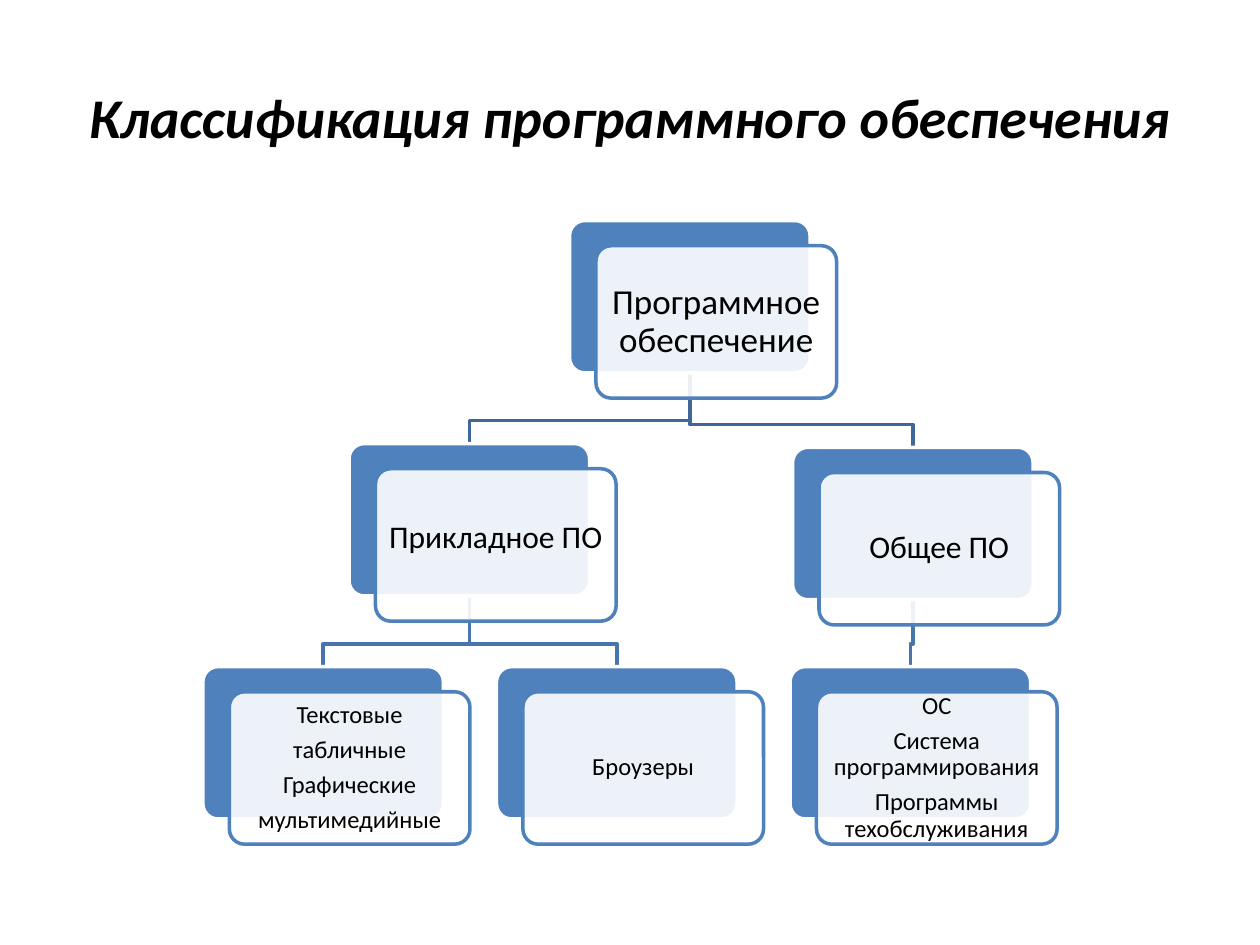
from dataclasses import dataclass

from lxml import etree
from pptx import Presentation
from pptx.dml.color import RGBColor
from pptx.enum import shapes, text
from pptx.oxml import ns
from pptx.util import Inches, Pt

BLACK = RGBColor(0x00, 0x00, 0x00)
WHITE = RGBColor(0xFF, 0xFF, 0xFF)
BLUE = RGBColor(0x4F, 0x81, 0xBD)
UPPER_LINK = RGBColor(0x3F, 0x67, 0x97)
LOWER_LINK = RGBColor(0x48, 0x75, 0xAC)

CARD_WIDTH, CARD_HEIGHT = 1.91, 1.21
CARD_OFFSET_X, CARD_OFFSET_Y = 0.21, 0.2
LABEL_MARGIN = 0.035
LINK_DROP = 0.18
LEAF_TOP, LEAF_LEFT, LEAF_PITCH = 5.29, 1.61, 2.33


@dataclass
class Node:
    left: float
    top: float
    lines: tuple
    size: int
    inset: float
    spacing: float = 0.9
    lift: float = 0

    @property
    def center(self):
        return self.left + CARD_WIDTH / 2


class Diagram:
    font = "Calibri"
    line_width = Pt(2)

    def __init__(self, slide):
        self.slide = slide

    def style(self, paragraph, size):
        paragraph.alignment = text.PP_ALIGN.CENTER
        paragraph.font.name = self.font
        paragraph.font.size = Pt(size)
        paragraph.font.color.rgb = BLACK

    def title(self, wording):
        title = self.slide.shapes.title
        title.left, title.top = Inches(0.5), Inches(0.3)
        title.width, title.height = Inches(9), Inches(1.25)
        title.text_frame.text = wording
        title.text_frame.vertical_anchor = text.MSO_ANCHOR.MIDDLE
        heading = title.text_frame.paragraphs[0]
        self.style(heading, 32)
        heading.font.bold = heading.font.italic = True

    def link(self, parent, child, color):
        start = parent.top + CARD_HEIGHT
        bend = child.top - LINK_DROP
        route = [(parent.center, bend), (child.center, bend), (child.center, child.top)]
        builder = self.slide.shapes.build_freeform(Inches(parent.center), Inches(start))
        builder.add_line_segments([(Inches(x), Inches(y)) for x, y in route], close=False)
        link = builder.convert_to_shape()
        link.shadow.inherit = False
        link.fill.background()
        link.line.color.rgb = color
        link.line.width = self.line_width

    def card(self, left, top, fill, outline, opacity=100):
        card = self.slide.shapes.add_shape(
            shapes.MSO_SHAPE.ROUNDED_RECTANGLE,
            Inches(left), Inches(top), Inches(CARD_WIDTH), Inches(CARD_HEIGHT))
        card.adjustments[0] = 0.1
        card.shadow.inherit = False
        card.fill.solid()
        card.fill.fore_color.rgb = fill
        card.line.color.rgb = outline
        card.line.width = self.line_width
        if opacity < 100:
            tint = card.fill._xPr.find(ns.qn("a:solidFill"))[0]
            etree.SubElement(tint, ns.qn("a:alpha"), val=str(opacity * 1000))

    def label(self, node, left, top):
        box = self.slide.shapes.add_textbox(
            Inches(left + LABEL_MARGIN), Inches(top + LABEL_MARGIN),
            Inches(CARD_WIDTH - 2 * LABEL_MARGIN), Inches(CARD_HEIGHT - 2 * LABEL_MARGIN))
        frame = box.text_frame
        frame.word_wrap = True
        frame.vertical_anchor = text.MSO_ANCHOR.MIDDLE
        frame.margin_left = frame.margin_right = frame.margin_top = Inches(node.inset)
        frame.margin_bottom = Inches(node.inset + node.lift)
        frame.text = "\n".join(node.lines)
        for paragraph in frame.paragraphs:
            self.style(paragraph, node.size)
            paragraph.line_spacing = node.spacing
            paragraph.space_after = Pt(0.35 * node.size)

    def node(self, node):
        front_left, front_top = node.left + CARD_OFFSET_X, node.top + CARD_OFFSET_Y
        self.card(node.left, node.top, BLUE, WHITE)
        self.card(front_left, front_top, WHITE, BLUE, opacity=90)
        self.label(node, front_left, front_top)


def main():
    deck = Presentation()
    deck.slide_width, deck.slide_height = Inches(10), Inches(7.5)
    diagram = Diagram(deck.slides.add_slide(deck.slide_layouts[5]))
    diagram.title("Классификация программного обеспечения")

    software = Node(4.52, 1.75, ("Программное обеспечение",), 20, 0.08)
    applied = Node(2.77, 3.52, ("Прикладное ПО",), 18, 0.07, spacing=1.0, lift=0.15)
    common = Node(6.29, 3.55, ("Общее ПО",), 18, 0.07)
    leaf_lines = [
        ("Текстовые", "табличные", "Графические", "мультимедийные"),
        ("Броузеры",),
        ("ОС", "Система программирования", "Программы техобслуживания"),
    ]
    editors, browsers, system = [
        Node(LEAF_LEFT + column * LEAF_PITCH, LEAF_TOP, lines, 14, 0.06)
        for column, lines in enumerate(leaf_lines)
    ]

    for parent, child, color in [
        (common, system, LOWER_LINK),
        (software, common, UPPER_LINK),
        (applied, browsers, LOWER_LINK),
        (applied, editors, LOWER_LINK),
        (software, applied, UPPER_LINK),
    ]:
        diagram.link(parent, child, color)
    for node in (software, applied, editors, browsers, common, system):
        diagram.node(node)

    deck.save("out.pptx")


if __name__ == "__main__":
    main()
